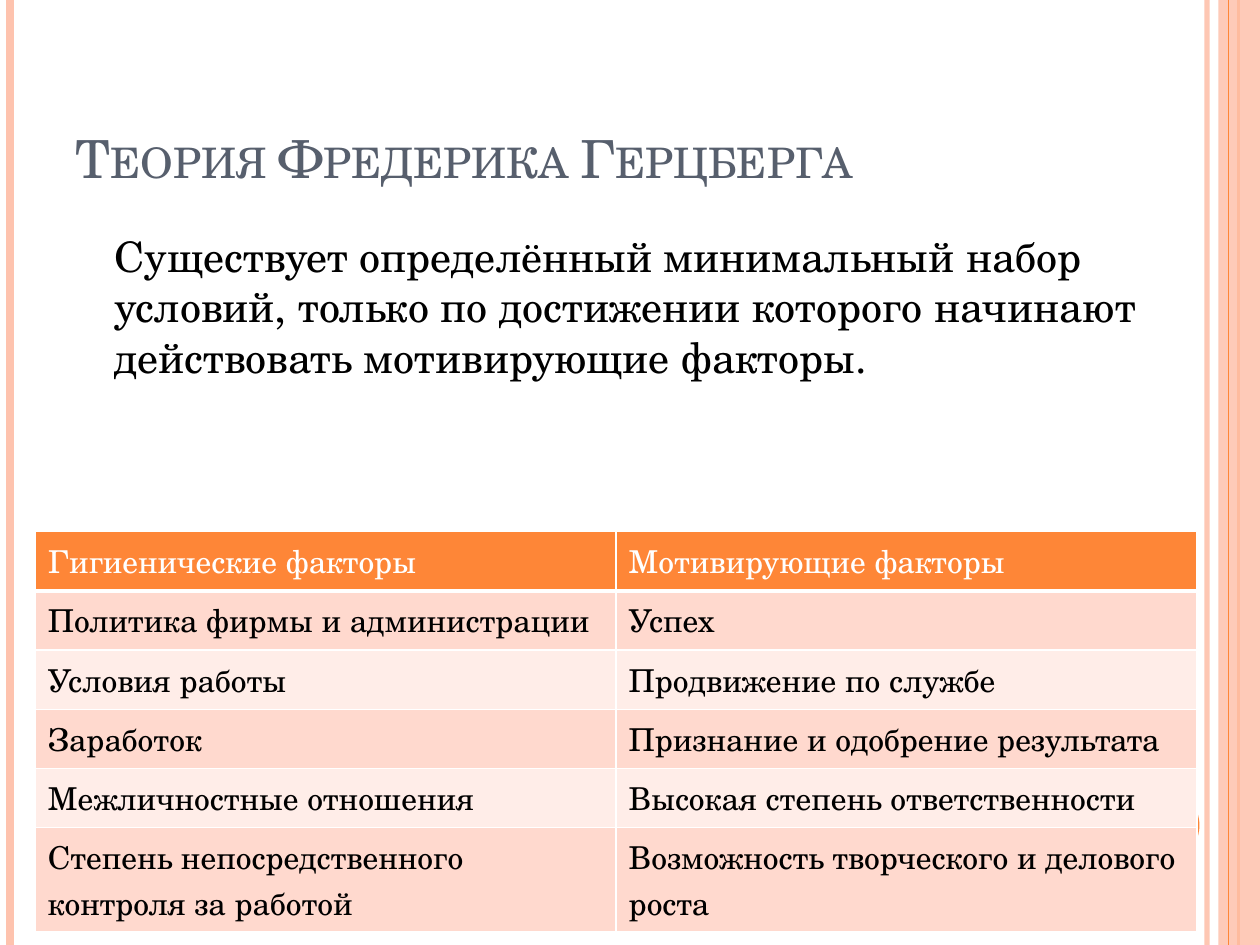
from typing import NamedTuple

from lxml.etree import SubElement
from pptx import Presentation
from pptx.dml.color import RGBColor
from pptx.enum.shapes import MSO_CONNECTOR, MSO_SHAPE
from pptx.enum.text import MSO_ANCHOR
from pptx.oxml.ns import qn
from pptx.util import Inches, Pt

FONT = "TeX Gyre Schola"
PEACH = RGBColor(0xFE, 0xC3, 0xAE)
ORANGE = RGBColor(0xFE, 0x86, 0x37)
SLATE = RGBColor(0x57, 0x5F, 0x6D)
BLACK = RGBColor(0, 0, 0)
WHITE = RGBColor(0xFF, 0xFF, 0xFF)
BANDS = (RGBColor(0xFF, 0xD9, 0xCE), RGBColor(0xFF, 0xED, 0xE8))


class Stripe(NamedTuple):
    x: float
    width: float
    color: RGBColor
    alpha: int = 100


class Block(NamedTuple):
    x: float
    y: float
    w: float
    h: float
    text: str
    size: int
    color: RGBColor
    anchor: MSO_ANCHOR


LEFT = (Stripe(9.58, 3, PEACH, 93), Stripe(0.08, 4.5, PEACH),
        Stripe(9.83, 1.5, ORANGE))
INNER = Stripe(9.75, 0.75, ORANGE)
TITLE = Block(0.5, 0.3, 8.17, 1.25, "Теория Фредерика Герцберга",
              30, SLATE, MSO_ANCHOR.BOTTOM)
BODY = Block(0.51, 1.78, 8.71, 2.2,
             "Существует определённый минимальный набор условий, только по "
             "достижении которого начинают действовать мотивирующие факторы.",
             24, BLACK, MSO_ANCHOR.TOP)
ROWS = (
    ("Гигиенические факторы", "Мотивирующие факторы"),
    ("Политика фирмы и администрации", "Успех"),
    ("Условия работы", "Продвижение по службе"),
    ("Заработок", "Признание и одобрение результата"),
    ("Межличностные отношения", "Высокая степень ответственности"),
    ("Степень непосредственного контроля за работой",
     "Возможность творческого и делового роста"),
)


def fade(fill, alpha: int) -> None:
    """Set the opacity, in percent, of a solid a:solidFill element."""
    if alpha < 100:
        SubElement(fill[0], qn("a:alpha"), val=str(alpha * 1000))


def add_stripe(slide, item: Stripe) -> None:
    line = slide.shapes.add_connector(
        MSO_CONNECTOR.STRAIGHT, Inches(item.x), 0, Inches(item.x), Inches(7.5))
    line.line.width = Pt(item.width)
    line.line.color.rgb = item.color
    props = line._element.spPr
    fade(props.find(".//" + qn("a:solidFill")), item.alpha)
    SubElement(props, qn("a:effectLst"))


def add_fill(slide, kind: MSO_SHAPE, x: float, y: float, w: float, h: float,
             color: RGBColor, alpha: int = 100) -> None:
    shape = slide.shapes.add_shape(
        kind, Inches(x), Inches(y), Inches(w), Inches(h))
    shape.shadow.inherit = False
    shape.fill.solid()
    shape.fill.fore_color.rgb = color
    fade(shape._element.spPr.find(qn("a:solidFill")), alpha)
    shape.line.fill.background()


def add_run(para, text: str, size: int, color: RGBColor):
    run = para.add_run()
    run.text = text
    run.font.name = FONT
    run.font.size = Pt(size)
    run.font.bold = False
    run.font.color.rgb = color
    return run


def add_block(slide, item: Block):
    box = slide.shapes.add_textbox(
        Inches(item.x), Inches(item.y), Inches(item.w), Inches(item.h))
    frame = box.text_frame
    frame.word_wrap = True
    frame.vertical_anchor = item.anchor
    para = frame.paragraphs[0]
    run = add_run(para, item.text, item.size, item.color)
    return para, run


def add_edges(cell, top: float, low: float) -> None:
    """Draw white cell borders with the given top and bottom widths."""
    props = cell._tc.get_or_add_tcPr()
    widths = (("L", 1), ("R", 1), ("T", top), ("B", low))
    for place, (side, width) in enumerate(widths):
        edge = SubElement(props, qn(f"a:ln{side}"), w=str(Pt(width)))
        fill = SubElement(edge, qn("a:solidFill"))
        SubElement(fill, qn("a:srgbClr"), val=str(WHITE))
        props.insert(place, edge)


def add_grid(slide) -> None:
    high = [0.47] * (len(ROWS) - 1) + [0.83]
    table = slide.shapes.add_table(
        len(ROWS), 2, Inches(0.28), Inches(4.22),
        Inches(9.22), Inches(sum(high))).table
    for col in table.columns:
        col.width = Inches(4.61)
    for r, texts in enumerate(ROWS):
        table.rows[r].height = Inches(high[r])
        for c, text in enumerate(texts):
            cell = table.cell(r, c)
            cell.fill.solid()
            cell.fill.fore_color.rgb = BANDS[(r - 1) % 2] if r else ORANGE
            add_edges(cell, 1, 1 if r else 3)
            para = cell.text_frame.paragraphs[0]
            add_run(para, text, 18, BLACK if r else WHITE)


def main() -> None:
    deck = Presentation()
    deck.slide_width, deck.slide_height = Inches(10), Inches(7.5)
    slide = deck.slides.add_slide(deck.slide_layouts[6])

    # Side stripes and the dot
    for item in LEFT:
        add_stripe(slide, item)
    add_fill(slide, MSO_SHAPE.RECTANGLE, 9.67, 0, 0.33, 7.5, PEACH, 87)
    add_stripe(slide, INNER)
    add_fill(slide, MSO_SHAPE.OVAL, 8.92, 6.25, 0.6, 0.6, ORANGE)

    # Title in small capitals
    _, run = add_block(slide, TITLE)
    run.font._element.set("cap", "small")

    # Indented statement
    para, _ = add_block(slide, BODY)
    para.space_before = Pt(6)
    para._p.get_or_add_pPr().set("marL", str(Inches(0.3)))

    # Table of factors
    add_grid(slide)
    deck.save("out.pptx")


if __name__ == "__main__":
    main()
